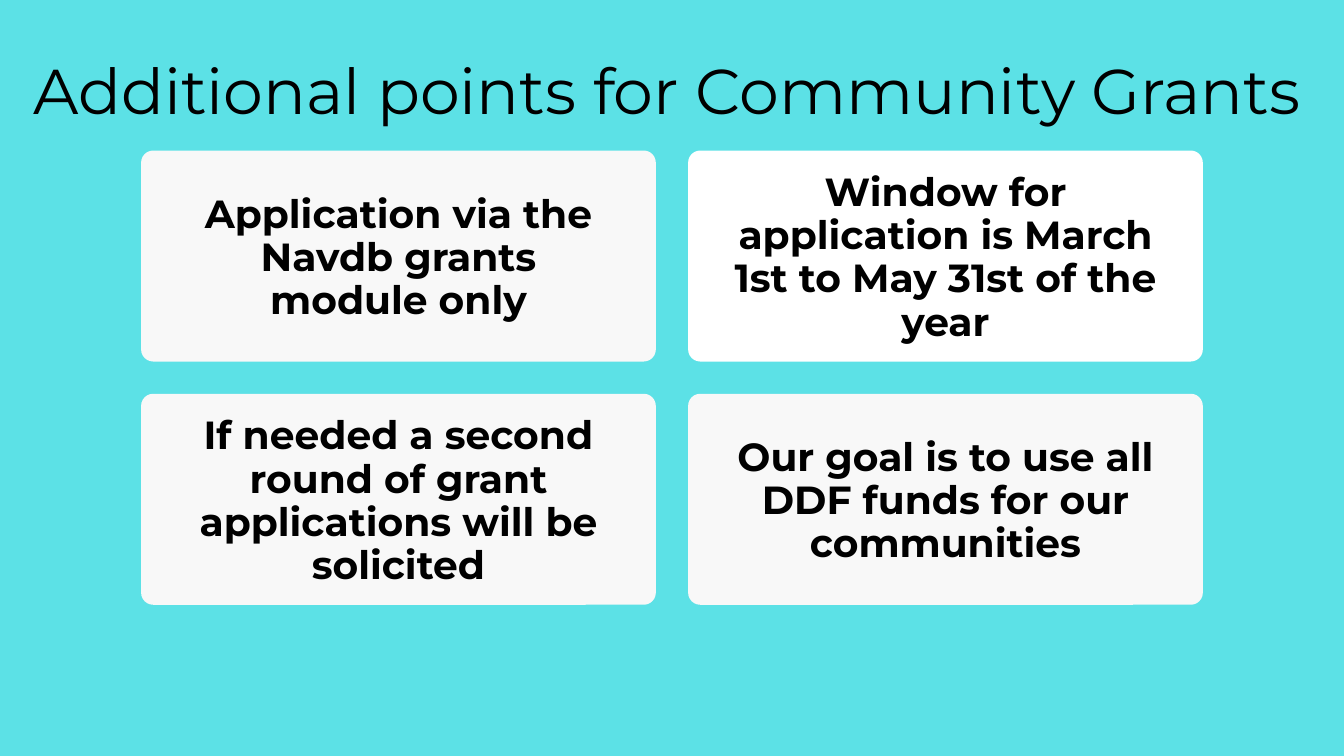
from dataclasses import dataclass

from pptx import Presentation
from pptx.dml.color import RGBColor
from pptx.enum.shapes import MSO_SHAPE
from pptx.enum.text import MSO_ANCHOR, PP_ALIGN
from pptx.util import Inches, Pt

TITLE = "Additional points for Community Grants"
# Rows of cards: (text, is highlighted)
CARD_ROWS = [
    [("Application via the Navdb grants module only", False),
     ("Window for application is March 1st to May 31st of the year", True)],
    [("If needed a second round of grant applications will be solicited", False),
     ("Our goal is to use all DDF funds for our communities", False)],
]


@dataclass(frozen=True)
class Theme:
    font: str = "Montserrat"
    background: str = "5CE1E6"
    card: str = "F8F8F8"
    highlight: str = "FFFFFF"
    ink: str = "000000"
    title_size: float = 67.8
    card_size: float = 42
    line_factor: float = 1.1


THEME = Theme()
SLIDE_W, SLIDE_H = 20, 11.25
CARD_W, CARD_H, GAP = 7.66, 3.14, 0.48
GRID_LEFT = (SLIDE_W - 2 * CARD_W - GAP) / 2
GRID_TOP = 2.24
CORNER = 0.18
SIDE_INSET = 0.54
TOP_INSET = 0.05


def paint(fill, color):
    fill.solid()
    fill.fore_color.rgb = RGBColor.from_string(color)


def write(shape, text, size, bold=False, side=0, top=0, anchor=MSO_ANCHOR.MIDDLE):
    """Set one centred paragraph with fixed line spacing."""
    frame = shape.text_frame
    frame.word_wrap = True
    frame.vertical_anchor = anchor
    frame.margin_left = frame.margin_right = Inches(side)
    frame.margin_top, frame.margin_bottom = Inches(top), 0
    paragraph = frame.paragraphs[0]
    paragraph.alignment = PP_ALIGN.CENTER
    paragraph.line_spacing = Pt(round(size * THEME.line_factor, 1))
    paragraph.space_before = Pt(0)
    run = paragraph.add_run()
    run.text = text
    run.font.name = THEME.font
    run.font.size = Pt(size)
    run.font.bold = bold
    run.font.color.rgb = RGBColor.from_string(THEME.ink)


def add_card(slide, row, column, text, highlighted):
    left = GRID_LEFT + column * (CARD_W + GAP)
    top = GRID_TOP + row * (CARD_H + GAP)
    card = slide.shapes.add_shape(
        MSO_SHAPE.ROUNDED_RECTANGLE,
        Inches(left), Inches(top), Inches(CARD_W), Inches(CARD_H))
    card.adjustments[0] = CORNER / CARD_H
    card.shadow.inherit = False
    card.line.fill.background()
    paint(card.fill, THEME.highlight if highlighted else THEME.card)
    write(card, text, THEME.card_size, True, SIDE_INSET, TOP_INSET)


def main():
    deck = Presentation()
    deck.slide_width, deck.slide_height = Inches(SLIDE_W), Inches(SLIDE_H)
    slide = deck.slides.add_slide(deck.slide_layouts[5])
    paint(slide.background.fill, THEME.background)

    title = slide.shapes.title
    title.left, title.top = Inches(0.32), Inches(0.85)
    title.width, title.height = Inches(19.2), Inches(1.05)
    write(title, TITLE, THEME.title_size, anchor=MSO_ANCHOR.TOP)

    for row, cards in enumerate(CARD_ROWS):
        for column, (text, highlighted) in enumerate(cards):
            add_card(slide, row, column, text, highlighted)

    deck.save("out.pptx")


if __name__ == "__main__":
    main()
